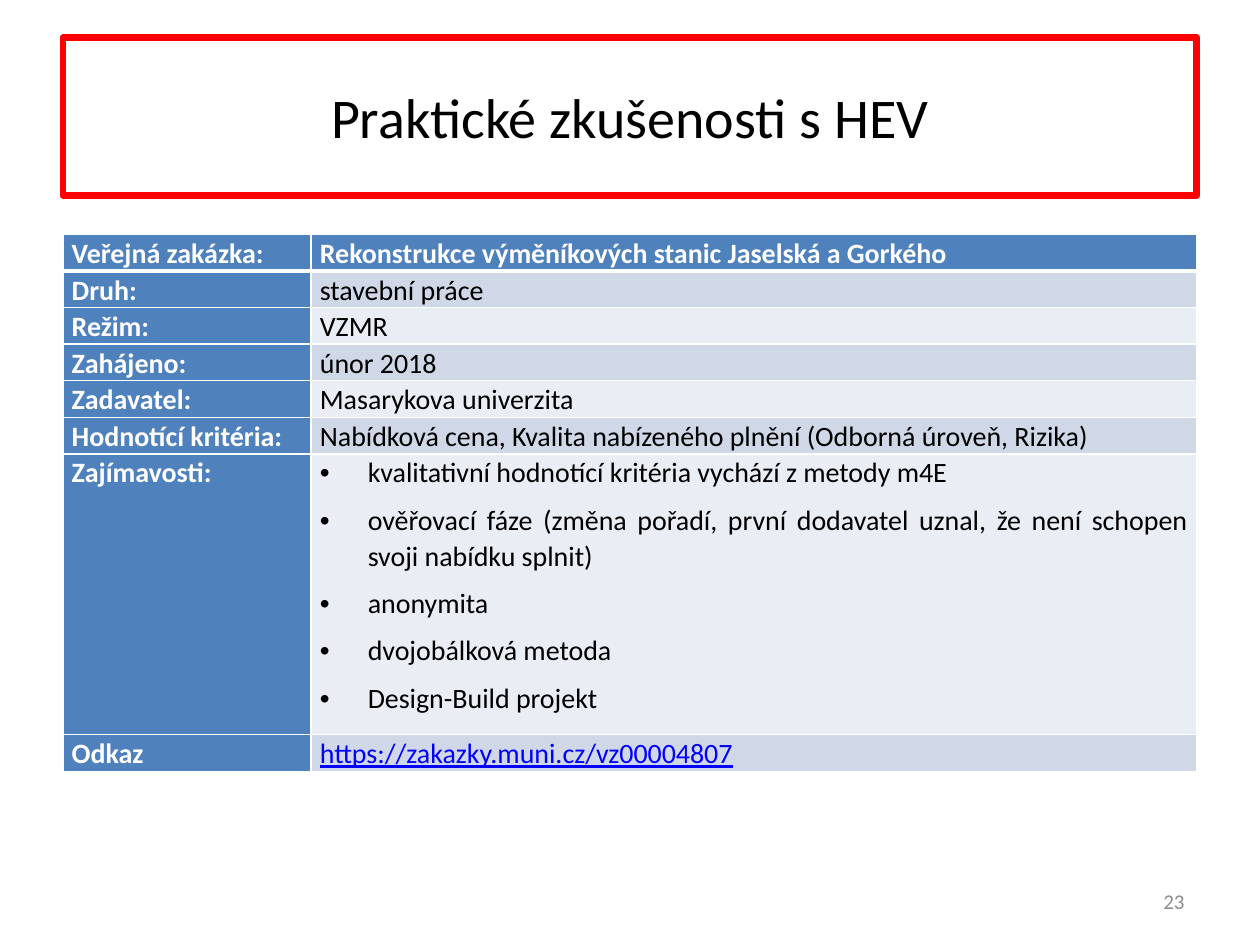
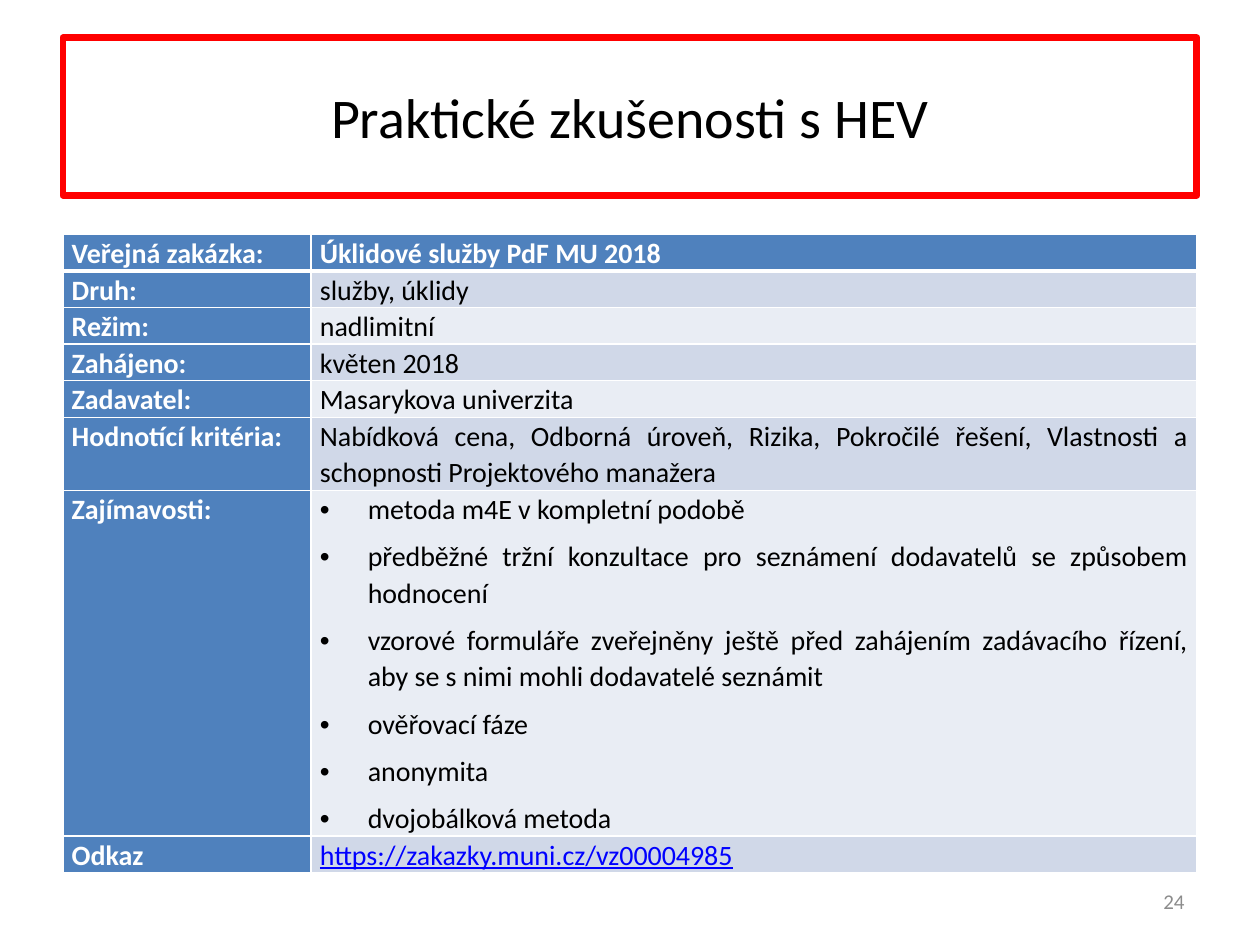
from pptx import Presentation
from pptx.dml.color import RGBColor
from pptx.enum.text import MSO_ANCHOR as Anchor, PP_ALIGN as Align
from pptx.oxml.ns import qn
from pptx.util import Pt
from lxml.etree import SubElement

FONT = "Calibri"
WHITE, BLACK, GREY = "FFFFFF", "000000", "8C8C8C"
RED, BLUE, LINK = "FF0000", "4F81BD", "0000FF"
BANDS = ("D0D8E8", "E9EDF4")
LEFT, WIDTH = 36, 648
LABEL_WIDTH = 141.84
LINE_HEIGHT = 20.9
INDENT = 27.36
TITLE = "Praktické zkušenosti s HEV"
LABELS = ("Veřejná zakázka:", "Druh:", "Režim:", "Zahájeno:", "Zadavatel:",
          "Hodnotící kritéria:", "Zajímavosti:", "Odkaz")

# Each tender: page number, heights of the criteria and highlights rows, values in label order.
TENDERS = (
    (23, LINE_HEIGHT, 160.5, (
        "Rekonstrukce výměníkových stanic Jaselská a Gorkého",
        "stavební práce",
        "VZMR",
        "únor 2018",
        "Masarykova univerzita",
        "Nabídková cena, Kvalita nabízeného plnění (Odborná úroveň, Rizika)",
        ["kvalitativní hodnotící kritéria vychází z metody m4E",
         "ověřovací fáze (změna pořadí, první dodavatel uznal, že není schopen svoji nabídku splnit)",
         "anonymita",
         "dvojobálková metoda",
         "Design-Build projekt"],
        "https://zakazky.muni.cz/vz00004807")),
    (24, 2 * LINE_HEIGHT, 197.5, (
        "Úklidové služby PdF MU 2018",
        "služby, úklidy",
        "nadlimitní",
        "květen 2018",
        "Masarykova univerzita",
        "Nabídková cena, Odborná úroveň, Rizika, Pokročilé řešení, "
        "Vlastnosti a schopnosti Projektového manažera",
        ["metoda m4E v kompletní podobě",
         "předběžné tržní konzultace pro seznámení dodavatelů se způsobem hodnocení",
         "vzorové formuláře zveřejněny ještě před zahájením zadávacího řízení, "
         "aby se s nimi mohli dodavatelé seznámit",
         "ověřovací fáze",
         "anonymita",
         "dvojobálková metoda"],
        "https://zakazky.muni.cz/vz00004985")),
)


def color(value):
    return RGBColor.from_string(value)


def set_all(target, values):
    for name, value in values.items():
        setattr(target, name, value)


def write(para, text, size, ink, **font_values):
    span = para.add_run()
    span.text = text
    set_all(span.font, {"name": FONT, "size": Pt(size), **font_values})
    span.font.color.rgb = color(ink)


def add_title(page):
    title = page.shapes.title
    set_all(title, {"left": Pt(LEFT), "top": Pt(21.6), "width": Pt(WIDTH), "height": Pt(90)})
    title.line.color.rgb = color(RED)
    title.line.width = Pt(4)
    SubElement(title.line._ln, qn("a:round"))
    title.text_frame.vertical_anchor = Anchor.MIDDLE
    para = title.text_frame.paragraphs[0]
    para.alignment = Align.CENTER
    write(para, TITLE, 32, BLACK)


def add_page_number(page, number):
    box = page.shapes.add_textbox(Pt(516), Pt(500.5), Pt(168), Pt(28.75))
    set_all(box.text_frame, {"word_wrap": True, "vertical_anchor": Anchor.MIDDLE})
    para = box.text_frame.paragraphs[0]
    para.alignment = Align.RIGHT
    write(para, str(number), 12, GREY)


def add_bullet(para):
    properties = para._p.get_or_add_pPr()
    properties.set("marL", str(Pt(INDENT)))
    properties.set("indent", str(-Pt(INDENT)))
    SubElement(properties, qn("a:buFont"), typeface="Arial")
    SubElement(properties, qn("a:buChar"), char="•")


def add_borders(cell, top, bottom):
    """Draw white cell edges; the side edges are always 1 point wide."""
    properties = cell._tc.get_or_add_tcPr()
    for side, width in (("L", 1), ("R", 1), ("T", top), ("B", bottom)):
        line = SubElement(properties, qn(f"a:ln{side}"), w=str(Pt(width)))
        fill = SubElement(line, qn("a:solidFill"))
        SubElement(fill, qn("a:srgbClr"), val=WHITE)


def fill_cell(cell, content, background, ink, **font_values):
    """Write a string, or a list of strings as bullets, into a cell."""
    cell.fill.solid()
    cell.fill.fore_color.rgb = color(background)
    set_all(cell, {"margin_left": Pt(5), "margin_right": Pt(5),
                   "margin_top": 0, "margin_bottom": 0})
    bulleted = isinstance(content, list)
    frame = cell.text_frame
    for index, text in enumerate(content if bulleted else [content]):
        para = frame.add_paragraph() if index else frame.paragraphs[0]
        set_all(para, {"alignment": Align.JUSTIFY, "line_spacing": 1.07,
                       "space_before": Pt(3 if index else 0), "space_after": Pt(3)})
        if bulleted:
            add_bullet(para)
        write(para, text, 16, ink, **font_values)


def add_tender_table(page, criteria_height, highlights_height, values):
    heights = [LINE_HEIGHT] * 5 + [criteria_height, highlights_height, LINE_HEIGHT]
    table = page.shapes.add_table(len(LABELS), 2, Pt(LEFT), Pt(134), Pt(WIDTH),
                                  Pt(sum(heights))).table
    table.horz_banding = False
    table.columns[0].width = Pt(LABEL_WIDTH)
    table.columns[1].width = Pt(WIDTH - LABEL_WIDTH)
    for index, (label, value, height) in enumerate(zip(LABELS, values, heights)):
        table.rows[index].height = Pt(height)
        label_cell, value_cell = table.cell(index, 0), table.cell(index, 1)
        for cell in (label_cell, value_cell):
            add_borders(cell, 3 if index == 1 else 1, 3 if index == 0 else 1)
        fill_cell(label_cell, label, BLUE, WHITE, bold=True)
        if index == 0:
            fill_cell(value_cell, value, BLUE, WHITE, bold=True)
        else:
            is_link = index == len(LABELS) - 1
            fill_cell(value_cell, value, BANDS[(index - 1) % 2],
                      LINK if is_link else BLACK, bold=False, underline=is_link)


def main():
    deck = Presentation()
    set_all(deck, {"slide_width": Pt(720), "slide_height": Pt(540)})
    title_only = deck.slide_layouts[5]
    for number, criteria_height, highlights_height, values in TENDERS:
        page = deck.slides.add_slide(title_only)
        add_title(page)
        add_page_number(page, number)
        add_tender_table(page, criteria_height, highlights_height, values)
    deck.save("out.pptx")


if __name__ == "__main__":
    main()
